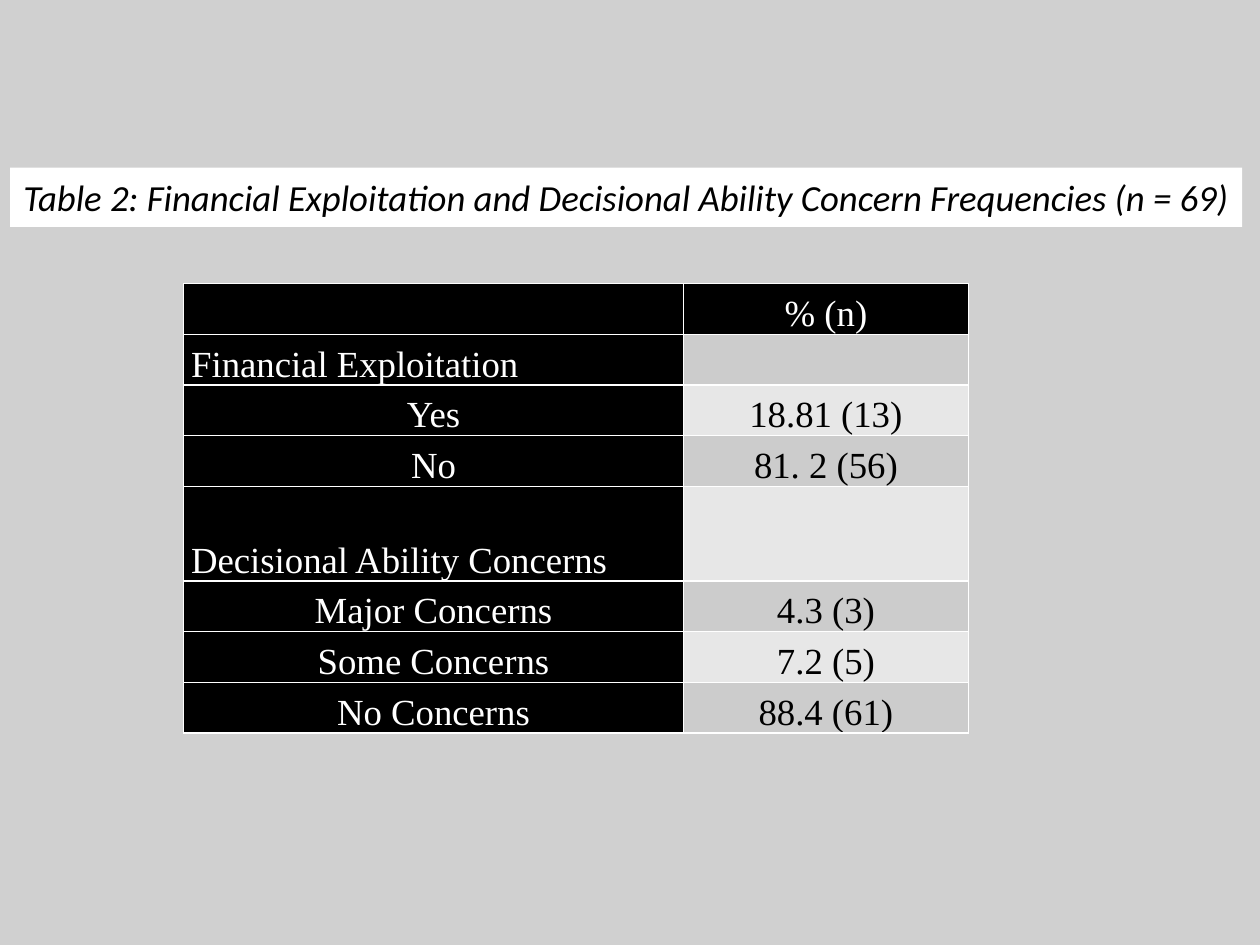
from pptx import Presentation
from pptx.dml.color import RGBColor
from pptx.enum.text import MSO_ANCHOR, MSO_AUTO_SIZE, PP_ALIGN
from pptx.oxml import parse_xml
from pptx.oxml.ns import nsdecls
from pptx.util import Pt

BLACK = RGBColor(0x00, 0x00, 0x00)
WHITE = RGBColor(0xFF, 0xFF, 0xFF)
BACKGROUND = RGBColor(0xD0, 0xD0, 0xD0)
BANDS = (RGBColor(0xE7, 0xE7, 0xE7), RGBColor(0xCC, 0xCC, 0xCC))

CAPTION = ("Table 2: Financial Exploitation and Decisional Ability "
           "Concern Frequencies (n = 69)")
FREQUENCIES = [
    ("", "% (n)"),
    ("Financial Exploitation", ""),
    ("Yes", "18.81 (13)"),
    ("No", "81. 2 (56)"),
    ("Decisional Ability Concerns", ""),
    ("Major Concerns", "4.3 (3)"),
    ("Some Concerns", "7.2 (5)"),
    ("No Concerns", "88.4 (61)"),
]
COLUMN_WIDTHS = (Pt(285.5), Pt(163))
ROW_HEIGHT = Pt(29)
SECOND_GROUP_ROW, SECOND_GROUP_HEIGHT = 4, Pt(54)


def format_paragraph(paragraph, font_name, color, align):
    paragraph.alignment = align
    paragraph.line_spacing = 1.07
    font = paragraph.font
    font.name, font.size, font.bold = font_name, Pt(21), False
    font.color.rgb = color


def add_caption(slide):
    # The box is tall enough to hold the whole line
    caption = slide.shapes.title
    caption.left, caption.top = Pt(5.75), Pt(95.75)
    caption.width, caption.height = Pt(704), Pt(34)
    caption.fill.solid()
    caption.fill.fore_color.rgb = WHITE
    frame = caption.text_frame
    frame.text = CAPTION
    frame.word_wrap = True
    frame.auto_size = MSO_AUTO_SIZE.NONE
    frame.vertical_anchor = MSO_ANCHOR.TOP
    frame.margin_left = frame.margin_right = Pt(5)
    frame.margin_top = frame.margin_bottom = Pt(2.5)
    paragraph = frame.paragraphs[0]
    format_paragraph(paragraph, "Calibri", BLACK, PP_ALIGN.CENTER)
    paragraph.space_before = Pt(0)
    paragraph.font.italic = True


def add_borders(cell):
    properties = cell._tc.get_or_add_tcPr()
    for position, side in enumerate(("lnL", "lnR", "lnT", "lnB")):
        properties.insert(position, parse_xml(
            f'<a:{side} {nsdecls("a")} w="{Pt(1)}"><a:solidFill>'
            f'<a:srgbClr val="{WHITE}"/></a:solidFill></a:{side}>'))


def fill_cell(cell, text, fill, color, align):
    cell.text = text
    cell.vertical_anchor = MSO_ANCHOR.BOTTOM
    cell.margin_left = cell.margin_right = Pt(4.25)
    cell.margin_top = cell.margin_bottom = 0
    cell.fill.solid()
    cell.fill.fore_color.rgb = fill
    format_paragraph(cell.text_frame.paragraphs[0], "Times New Roman", color, align)
    add_borders(cell)


def add_frequency_table(slide):
    table = slide.shapes.add_table(
        len(FREQUENCIES), len(COLUMN_WIDTHS), Pt(105), Pt(162),
        sum(COLUMN_WIDTHS), ROW_HEIGHT * len(FREQUENCIES)).table
    table.first_row = table.horz_banding = False
    for column, width in zip(table.columns, COLUMN_WIDTHS):
        column.width = width
    for index, (label, frequency) in enumerate(FREQUENCIES):
        table.rows[index].height = ROW_HEIGHT
        is_header = index == 0
        # Group headings have no frequency and stand at the left
        label_align = PP_ALIGN.CENTER if frequency else PP_ALIGN.LEFT
        fill_cell(table.cell(index, 0), label, BLACK, WHITE, label_align)
        fill_cell(table.cell(index, 1), frequency,
                  BLACK if is_header else BANDS[index % 2],
                  WHITE if is_header else BLACK, PP_ALIGN.CENTER)
    table.rows[SECOND_GROUP_ROW].height = SECOND_GROUP_HEIGHT


def main():
    presentation = Presentation()
    presentation.slide_width, presentation.slide_height = Pt(720), Pt(540)
    title_only = presentation.slide_layouts[5]
    slide = presentation.slides.add_slide(title_only)
    slide.background.fill.solid()
    slide.background.fill.fore_color.rgb = BACKGROUND
    add_caption(slide)
    add_frequency_table(slide)
    presentation.save("out.pptx")


if __name__ == "__main__":
    main()
